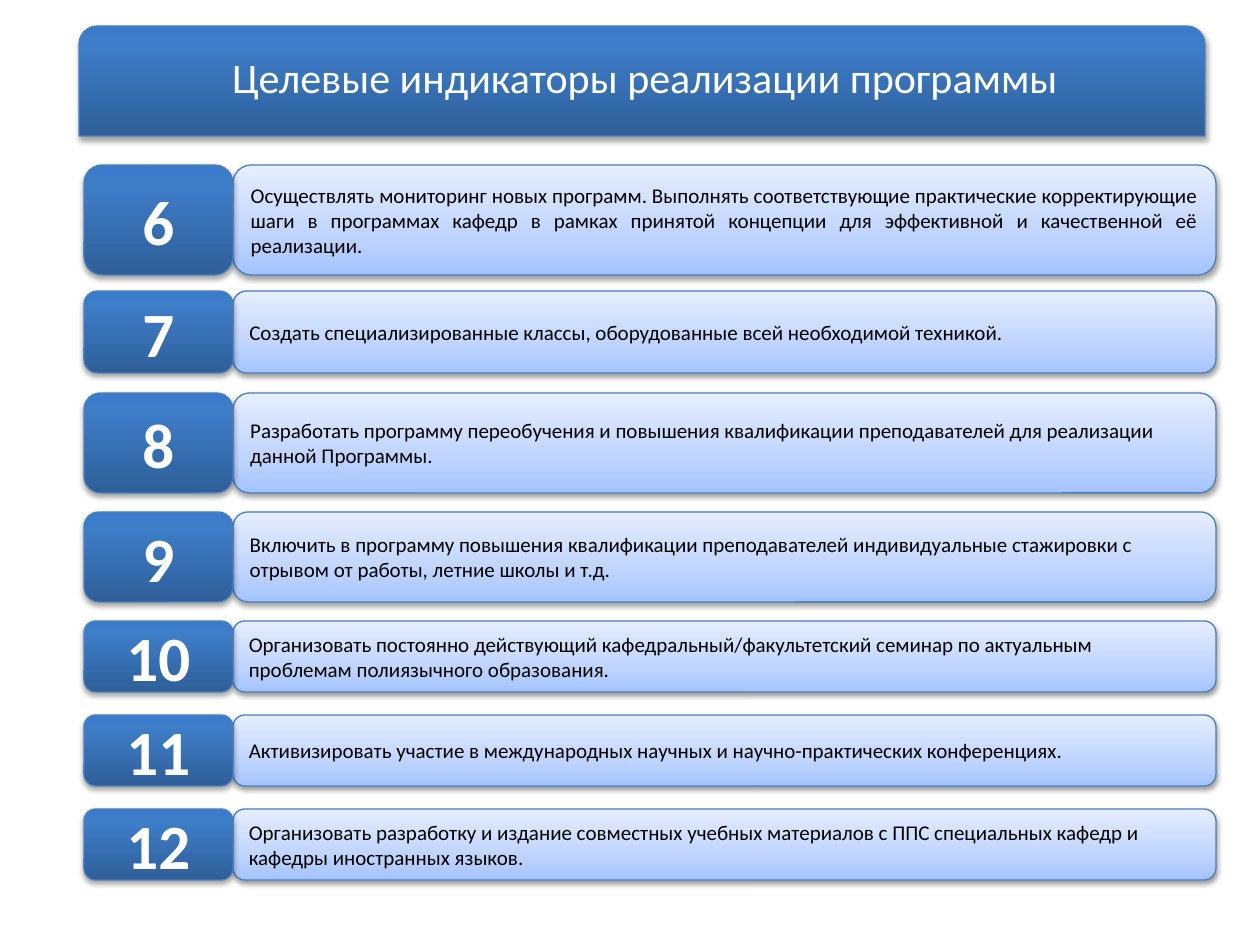
from lxml import etree
from pptx import Presentation
from pptx import util as u
from pptx.dml.color import RGBColor
from pptx.enum import shapes, text
from pptx.oxml.ns import qn

PX = 914400 // 126
COLORS = {
    "line": "4B7EBC", "white": "FFFFFF", "black": "000000",
    "dark": "2F5F99", "mid": "3D7CC7", "top": "3A7CCB",
    "sky": "A4C4FF", "soft": "BFD4FF", "pale": "E6EEFF",
}
BLUE = {"stops": [(0, "dark"), (80, "mid"), (100, "top")], "alpha": 35, "dist": 23000}
LIGHT = {"stops": [(0, "sky"), (35, "soft"), (100, "pale")], "alpha": 38, "dist": 20000}
LEFT, CENTER, JUST = text.PP_ALIGN.LEFT, text.PP_ALIGN.CENTER, text.PP_ALIGN.JUSTIFY
ROUND = shapes.MSO_SHAPE.ROUNDED_RECTANGLE
TITLE = "Целевые индикаторы реализации программы"
FIRST = 6
ROWS = [
    (165, 110, JUST, "Осуществлять мониторинг новых программ. Выполнять соответствующие "
     "практические корректирующие шаги в программах кафедр в рамках принятой концепции "
     "для эффективной и качественной её реализации."),
    (291, 82, JUST, "Создать специализированные классы, оборудованные всей необходимой техникой."),
    (393, 100, LEFT, "Разработать программу переобучения и повышения квалификации "
     "преподавателей для реализации данной Программы."),
    (512, 90, LEFT, "Включить в программу повышения квалификации преподавателей "
     "индивидуальные стажировки с отрывом от работы, летние школы и т.д."),
    (621, 71, LEFT, "Организовать постоянно действующий кафедральный/факультетский семинар "
     "по актуальным проблемам полиязычного образования."),
    (715, 71, LEFT, "Активизировать участие в международных научных и "
     "научно-практических конференциях."),
    (809, 71, LEFT, "Организовать разработку и издание совместных учебных материалов с ППС "
     "специальных кафедр и кафедры иностранных языков."),
]


def color(name):
    return RGBColor.from_string(COLORS[name])


def add_node(parent, tag, **attrs):
    return etree.SubElement(parent, qn(tag), {k: str(v) for k, v in attrs.items()})


def add_hue(parent, name):
    return add_node(parent, "a:srgbClr", val=COLORS[name])


def add_box(parent, kind, x, y, w, h, look):
    box = parent.add_shape(kind, x * PX, y * PX, w * PX, h * PX)
    box.fill.gradient()
    box.fill.gradient_angle = 90
    props = box.element.spPr
    stops = props.find(".//" + qn("a:gsLst"))
    for old in list(stops):
        stops.remove(old)
    for pos, name in look["stops"]:
        add_hue(add_node(stops, "a:gs", pos=pos * 1000), name)
    box.line.color.rgb = color("line")
    box.line.width = u.Pt(0.75)
    box.shadow.inherit = False
    shade = add_node(props.find(qn("a:effectLst")), "a:outerShdw", blurRad=40000,
                     dist=look["dist"], dir=5400000, rotWithShape=0)
    add_node(add_hue(shade, "black"), "a:alpha", val=look["alpha"] * 1000)
    return box


def set_text(box, words, size, hue, align, bold=False):
    frame = box.text_frame
    frame.word_wrap = True
    para = frame.paragraphs[0]
    para.text = words
    para.alignment = align
    font = para.font
    font.name, font.size, font.bold = "Calibri", u.Pt(size), bold
    font.color.rgb = color(hue)


def add_title(slide):
    add_box(slide.shapes, shapes.MSO_SHAPE.ROUND_2_SAME_RECTANGLE, 79, 26, 1126, 110, BLUE)
    label = slide.shapes.add_textbox(139 * PX, 45 * PX, 1012 * PX, 63 * PX)
    set_text(label, TITLE, 24, "white", CENTER)
    label.text_frame.auto_size = text.MSO_AUTO_SIZE.SHAPE_TO_FIT_TEXT


def add_row(slide, number, top, height, align, words):
    group = slide.shapes.add_group_shape()
    body = add_box(group.shapes, ROUND, 233, top, 983, height, LIGHT)
    set_text(body, words, 12, "black", align)
    badge = add_box(group.shapes, ROUND, 84, top, 149, height, BLUE)
    set_text(badge, str(number), 36, "white", CENTER, True)
    for box in (body, badge):
        box.text_frame.vertical_anchor = text.MSO_ANCHOR.MIDDLE


def main():
    deck = Presentation()
    deck.slide_width, deck.slide_height = u.Inches(10), u.Inches(7.5)
    slide = deck.slides.add_slide(deck.slide_layouts[6])
    add_title(slide)
    for number, row in enumerate(ROWS, FIRST):
        add_row(slide, number, *row)
    deck.save("out.pptx")


if __name__ == "__main__":
    main()
